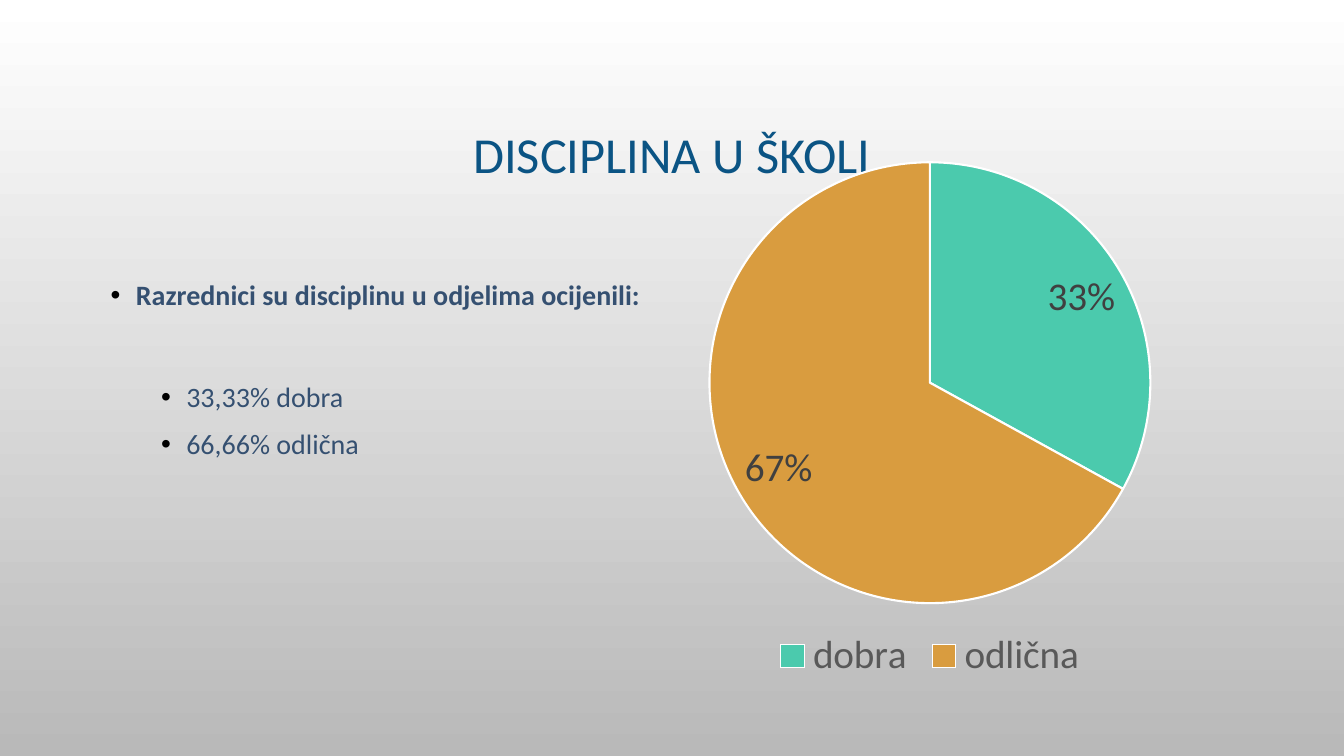
from pptx import Presentation
from pptx.chart.data import CategoryChartData
from pptx.dml.color import RGBColor
from pptx.enum.chart import XL_CHART_TYPE, XL_LABEL_POSITION, XL_LEGEND_POSITION
from pptx.enum.text import MSO_ANCHOR, PP_ALIGN
from pptx.oxml import parse_xml
from pptx.oxml.ns import nsdecls
from pptx.util import Pt

PIE = XL_CHART_TYPE.PIE
BEST_FIT = XL_LABEL_POSITION.BEST_FIT
LEGEND_BOTTOM = XL_LEGEND_POSITION.BOTTOM
MIDDLE, TOP = MSO_ANCHOR.MIDDLE, MSO_ANCHOR.TOP
CENTER, LEFT = PP_ALIGN.CENTER, PP_ALIGN.LEFT

THEME = {
    "font": "Calibri",
    "title_size": 36, "body_size": 20, "chart_size": 28,
    "title": "0B5484", "body": "355071", "bullet": "000000",
    "label": "404040", "legend": "595959", "edge": "FFFFFF",
    "background": ["FFFFFF", "B9B9B9"],
    "slices": ["4BCAAD", "D99C3F"],
}


def rgb(name):
    return RGBColor.from_string(name)


def add_text(p, text, size, color, bold=False, align=LEFT, spacing=1.0, before=0, indent=None):
    p.alignment = align
    p.line_spacing = spacing
    p.space_before = Pt(before)
    if indent is not None:
        pPr = p._p.get_or_add_pPr()
        pPr.set("marL", str(Pt(indent)))
        pPr.set("indent", str(Pt(-18)))
        pPr.append(parse_xml(f'<a:buClr {nsdecls("a")}><a:srgbClr val="{THEME["bullet"]}"/></a:buClr>'))
        pPr.append(parse_xml(f'<a:buFont {nsdecls("a")} typeface="Arial"/>'))
        pPr.append(parse_xml(f'<a:buChar {nsdecls("a")} char="•"/>'))
    r = p.add_run()
    r.text = text
    r.font.name = THEME["font"]
    r.font.size = Pt(size)
    r.font.bold = bold
    r.font.color.rgb = rgb(color)


prs = Presentation()
prs.slide_width, prs.slide_height = Pt(960), Pt(540)
s = prs.slides.add_slide(prs.slide_layouts[6])

fill = s.background.fill
fill.gradient()
fill.gradient_angle = 270
for stop, color in zip(fill.gradient_stops, THEME["background"]):
    stop.color.rgb = rgb(color)

title = s.shapes.add_textbox(Pt(72), Pt(49), Pt(816), Pt(126))
tf = title.text_frame
tf.word_wrap = True
tf.vertical_anchor = MIDDLE
add_text(tf.paragraphs[0], "DISCIPLINA U ŠKOLI", THEME["title_size"], THEME["title"],
         align=CENTER, spacing=0.9)

body = s.shapes.add_textbox(Pt(72), Pt(190), Pt(816), Pt(337))
tf = body.text_frame
tf.word_wrap = True
tf.vertical_anchor = TOP
bullets = [
    ("Razrednici su disciplinu u odjelima ocijenili:", True, 18, 0),
    ("33,33% dobra", False, 54, 44),
    ("66,66% odlična", False, 54, 5),
]
for i, (text, bold, indent, before) in enumerate(bullets):
    p = tf.add_paragraph() if i else tf.paragraphs[0]
    add_text(p, text, THEME["body_size"], THEME["body"], bold=bold,
             spacing=1.2, before=before, indent=indent)

data = CategoryChartData(number_format="0%")
data.categories = ["dobra", "odlična"]
data.add_series("Series 1", [0.33, 0.67])
chart = s.shapes.add_chart(PIE, Pt(402.5), Pt(106), Pt(523.5), Pt(385), data).chart
chart.has_title = False
chart.font.name = THEME["font"]
chart.font.size = Pt(10)

plot = chart.plots[0]
plot.vary_by_categories = True
for i, color in enumerate(THEME["slices"]):
    slice_format = plot.series[0].points[i].format
    slice_format.fill.solid()
    slice_format.fill.fore_color.rgb = rgb(color)
    slice_format.line.color.rgb = rgb(THEME["edge"])
    slice_format.line.width = Pt(1.5)

plot.has_data_labels = True
labels = plot.data_labels
labels.show_value = True
labels.show_percentage = False
labels.number_format = "0%"
labels.number_format_is_linked = False
labels.position = BEST_FIT

chart.has_legend = True
legend = chart.legend
legend.position = LEGEND_BOTTOM
legend.include_in_layout = False
for part, color in ((labels, THEME["label"]), (legend, THEME["legend"])):
    part.font.name = THEME["font"]
    part.font.size = Pt(THEME["chart_size"])
    part.font.color.rgb = rgb(color)

prs.save("out.pptx")
